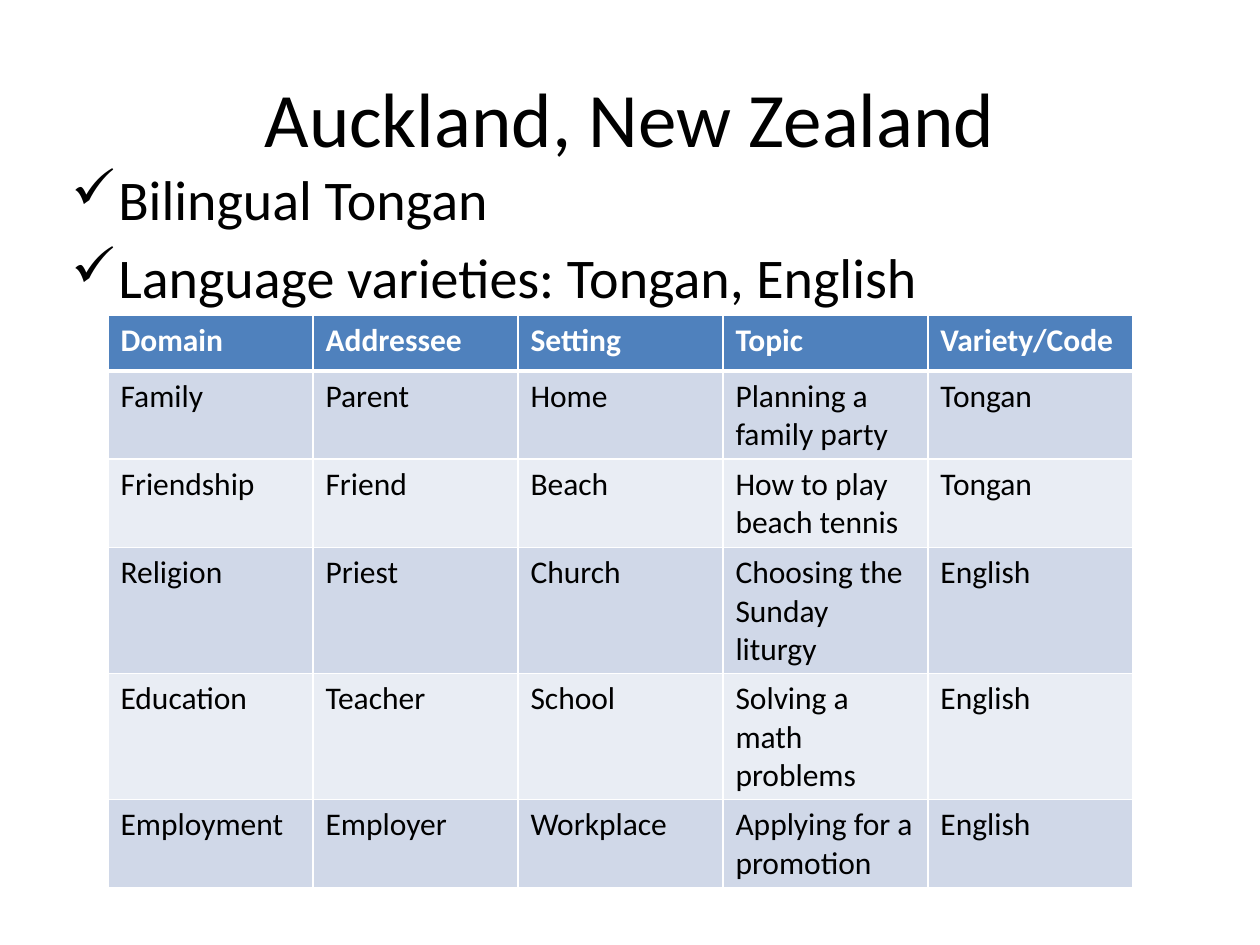
from lxml import etree
from pptx import Presentation
from pptx.dml.color import RGBColor
from pptx.enum.text import MSO_ANCHOR, PP_ALIGN
from pptx.oxml.ns import qn
from pptx.util import Emu, Pt

PX = 914400 // 126
BLACK = RGBColor(0x00, 0x00, 0x00)
WHITE = RGBColor(0xFF, 0xFF, 0xFF)
BLUE = RGBColor(0x4F, 0x81, 0xBD)
BANDS = (RGBColor(0xD0, 0xD8, 0xE8), RGBColor(0xE9, 0xED, 0xF4))
LEFT, CENTER = PP_ALIGN.LEFT, PP_ALIGN.CENTER
TOP, MIDDLE = MSO_ANCHOR.TOP, MSO_ANCHOR.MIDDLE

BULLETS = ["Bilingual Tongan", "Language varieties: Tongan, English"]
ROWS = [
    ("Domain", "Addressee", "Setting", "Topic", "Variety/Code"),
    ("Family", "Parent", "Home", "Planning a family party", "Tongan"),
    ("Friendship", "Friend", "Beach", "How to play beach tennis", "Tongan"),
    ("Religion", "Priest", "Church", "Choosing the Sunday liturgy", "English"),
    ("Education", "Teacher", "School", "Solving a math problems", "English"),
    ("Employment", "Employer", "Workplace", "Applying for a promotion", "English"),
]


def px(n):
    return Emu(n * PX)


def write(p, text, font="Calibri", size=18, color=BLACK, bold=False, align=LEFT):
    p.alignment = align
    r = p.add_run()
    r.text = text
    r.font.name = font
    r.font.size = Pt(size)
    r.font.bold = bold
    r.font.color.rgb = color


def add_bullet(p, char, indent):
    pPr = p._p.get_or_add_pPr()
    pPr.set("marL", str(px(indent)))
    pPr.set("indent", str(px(-indent)))
    etree.SubElement(pPr, qn("a:buChar"), char=char)


def add_borders(cell, color, bottom):
    tcPr = cell._tc.get_or_add_tcPr()
    for side, width in (("L", 1), ("R", 1), ("T", 1), ("B", bottom)):
        ln = etree.SubElement(tcPr, qn("a:ln" + side), w=str(Pt(width)))
        fill = etree.SubElement(ln, qn("a:solidFill"))
        etree.SubElement(fill, qn("a:srgbClr"), val=str(color))


class SlideBuilder:
    def __init__(self, prs):
        self.font = "Calibri"
        self.slide = prs.slides.add_slide(prs.slide_layouts[6])

    def text_box(self, x, y, w, h, anchor=TOP):
        box = self.slide.shapes.add_textbox(px(x), px(y), px(w), px(h))
        tf = box.text_frame
        tf.word_wrap = True
        tf.vertical_anchor = anchor
        return tf

    def title(self, text, *area):
        tf = self.text_box(*area, anchor=MIDDLE)
        write(tf.paragraphs[0], text, font=self.font, size=44, align=CENTER)

    def bullets(self, items, *area):
        tf = self.text_box(*area)
        for i, item in enumerate(items):
            p = tf.add_paragraph() if i else tf.paragraphs[0]
            if i:
                p.space_before = Pt(6.4)
            add_bullet(p, "✓", 47)
            write(p, item, font=self.font, size=32)

    def table(self, rows, x, y, col_w, row_h):
        n_rows, n_cols = len(rows), len(rows[0])
        table = self.slide.shapes.add_table(
            n_rows, n_cols, px(x), px(y), px(col_w * n_cols), px(row_h * n_rows)
        ).table
        for i, row in enumerate(rows):
            header = i == 0
            for j, text in enumerate(row):
                cell = table.cell(i, j)
                add_borders(cell, WHITE, bottom=3 if header else 1)
                cell.fill.solid()
                cell.fill.fore_color.rgb = BLUE if header else BANDS[(i - 1) % 2]
                write(cell.text_frame.paragraphs[0], text, font=self.font,
                      color=WHITE if header else BLACK, bold=header)


def main():
    prs = Presentation()
    prs.slide_width, prs.slide_height = px(1260), px(945)
    s = SlideBuilder(prs)

    # Heading and key points
    s.title("Auckland, New Zealand", 63, 38, 1134, 157)
    s.bullets(BULLETS, 59, 158, 1134, 624)

    # Language choice by domain
    s.table(ROWS, x=108, y=315, col_w=205, row_h=56)

    prs.save("out.pptx")


if __name__ == "__main__":
    main()
